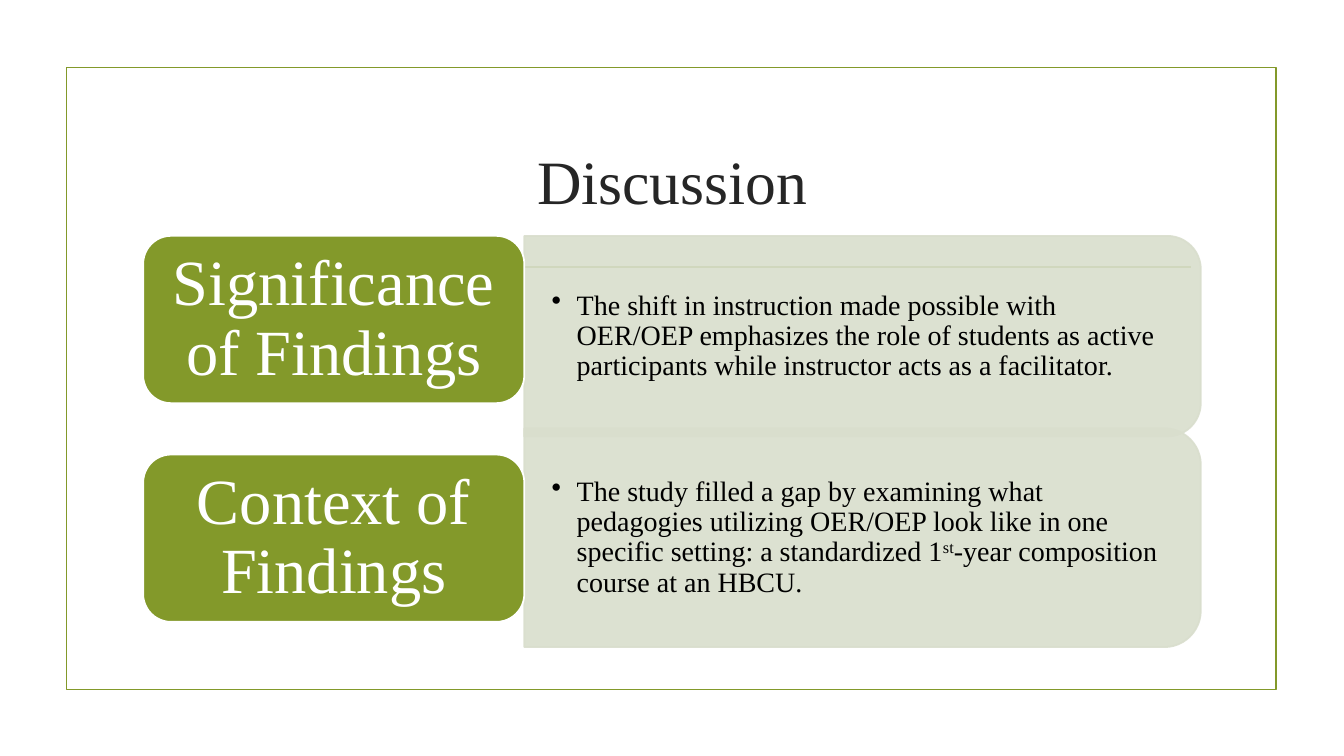
import pptx
import pptx.util
import pptx.dml.color
import pptx.enum.shapes
import pptx.enum.text
import pptx.oxml.ns
from lxml import etree

Inches = pptx.util.Inches
Pt = pptx.util.Pt
Shape = pptx.enum.shapes.MSO_SHAPE
Align = pptx.enum.text.PP_ALIGN
qn = pptx.oxml.ns.qn

FONT = "Times New Roman"
GREEN, SAGE, WHITE, BLACK, CHARCOAL = "83992A", "D9DECD", "FFFFFF", "000000", "262626"
TITLE = "Discussion"
FINDINGS = [
    {
        "label": "Significance of Findings",
        "detail": [
            ("The shift in instruction made possible with OER/OEP emphasizes the role of "
             "students as active participants while instructor acts as a facilitator.", 0),
        ],
        "panel_top": 2.34, "panel_height": 1.99, "label_top": 2.34,
    },
    {
        "label": "Context of Findings",
        "detail": [
            ("The study filled a gap by examining what pedagogies utilizing OER/OEP look like "
             "in one specific setting: a standardized 1", 0),
            ("st", 30),
            ("-year composition course at an HBCU.", 0),
        ],
        "panel_top": 4.25, "panel_height": 2.17, "label_top": 4.51,
    },
]
LABEL_LEFT, LABEL_WIDTH, LABEL_HEIGHT = 1.42, 3.78, 1.66
PANEL_LEFT, PANEL_WIDTH = LABEL_LEFT + LABEL_WIDTH, 6.71
DETAIL_WIDTH, DETAIL_TRIM = 6.61, 0.1


def color(value):
    return pptx.dml.color.RGBColor.from_string(value)


def add_box(kind, left, top, width, height, fill=None, line=GREEN, alpha=None):
    box = slide.shapes.add_shape(kind, Inches(left), Inches(top), Inches(width), Inches(height))
    box.shadow.inherit = False
    if fill:
        box.fill.solid()
        box.fill.fore_color.rgb = color(fill)
    else:
        box.fill.background()
    box.line.color.rgb = color(line)
    box.line.width = Pt(1.25)
    if alpha:
        for paint in box._element.spPr.iter(qn("a:srgbClr")):
            etree.SubElement(paint, qn("a:alpha")).set("val", str(alpha * 1000))
    return box


def write(holder, runs, size, ink, align=Align.LEFT, inset=(0.1, 0.05), spacing=None, bullet=False):
    frame = holder.text_frame
    frame.word_wrap = True
    frame.vertical_anchor = pptx.enum.text.MSO_ANCHOR.MIDDLE
    frame.margin_left = frame.margin_right = Inches(inset[0])
    frame.margin_top = frame.margin_bottom = Inches(inset[1])
    paragraph = frame.paragraphs[0]
    paragraph.alignment = align
    if spacing:
        paragraph.line_spacing = spacing
    if bullet:
        properties = paragraph._p.get_or_add_pPr()
        properties.set("marL", str(Inches(0.25)))
        properties.set("indent", str(-Inches(0.25)))
        etree.SubElement(properties, qn("a:buChar")).set("char", "•")
    for text, baseline in runs:
        run = paragraph.add_run()
        run.text = text
        run.font.name = FONT
        run.font.size = Pt(size)
        run.font.color.rgb = color(ink)
        if baseline:
            run._r.get_or_add_rPr().set("baseline", str(baseline * 1000))


def add_text_area(left, top, width, height):
    return slide.shapes.add_textbox(Inches(left), Inches(top), Inches(width), Inches(height))


deck = pptx.Presentation()
deck.slide_width, deck.slide_height = Inches(13.33), Inches(7.5)
slide = deck.slides.add_slide(deck.slide_layouts[6])

add_box(Shape.RECTANGLE, 0.66, 0.67, 12, 6.17)
divider = slide.shapes.add_connector(
    pptx.enum.shapes.MSO_CONNECTOR.STRAIGHT, Inches(1.53), Inches(2.65), Inches(11.81), Inches(2.65))
divider.line.color.rgb = color(GREEN)
divider.line.width = Pt(1.25)
etree.SubElement(divider._element.spPr, qn("a:effectLst"))

write(add_text_area(1.42, 1.07, 10.5, 1.43), [(TITLE, 0)], 44, CHARCOAL, align=Align.CENTER)

for finding in FINDINGS:
    top, height = finding["panel_top"], finding["panel_height"]
    turn = (PANEL_WIDTH - height) / 2
    panel = add_box(Shape.ROUND_2_SAME_RECTANGLE, PANEL_LEFT + turn, top - turn,
                    height, PANEL_WIDTH, fill=SAGE, line=SAGE, alpha=90)
    panel.rotation = 90
    detail = add_text_area(PANEL_LEFT, top + DETAIL_TRIM, DETAIL_WIDTH, height - 2 * DETAIL_TRIM)
    write(detail, finding["detail"], 20, BLACK, inset=(0.27, 0.14), spacing=0.9, bullet=True)
    label = add_box(Shape.ROUNDED_RECTANGLE, LABEL_LEFT, finding["label_top"],
                    LABEL_WIDTH, LABEL_HEIGHT, fill=GREEN, line=WHITE)
    write(label, [(finding["label"], 0)], 46, WHITE, align=Align.CENTER,
          inset=(0.19, 0.1), spacing=0.9)

deck.save("out.pptx")
